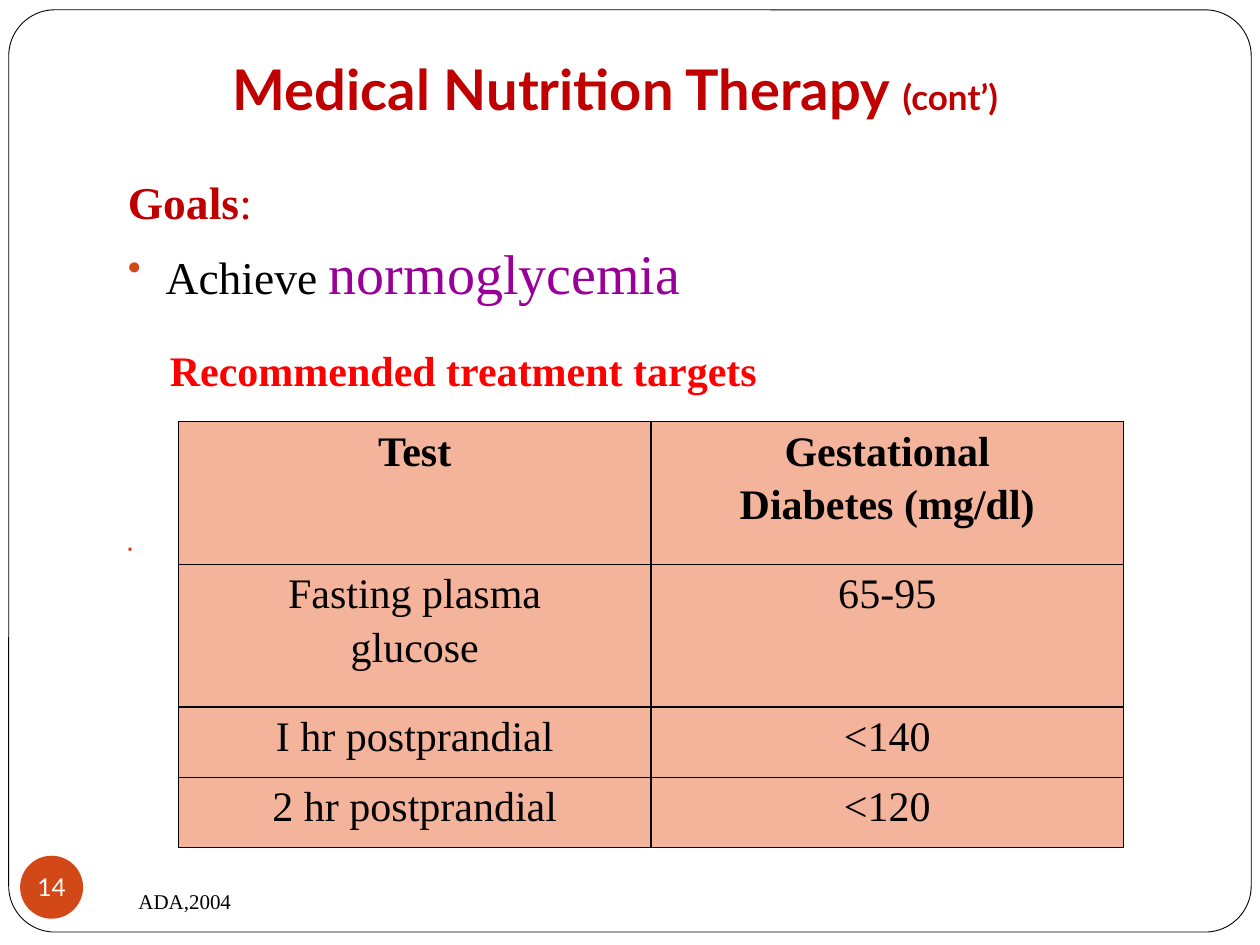
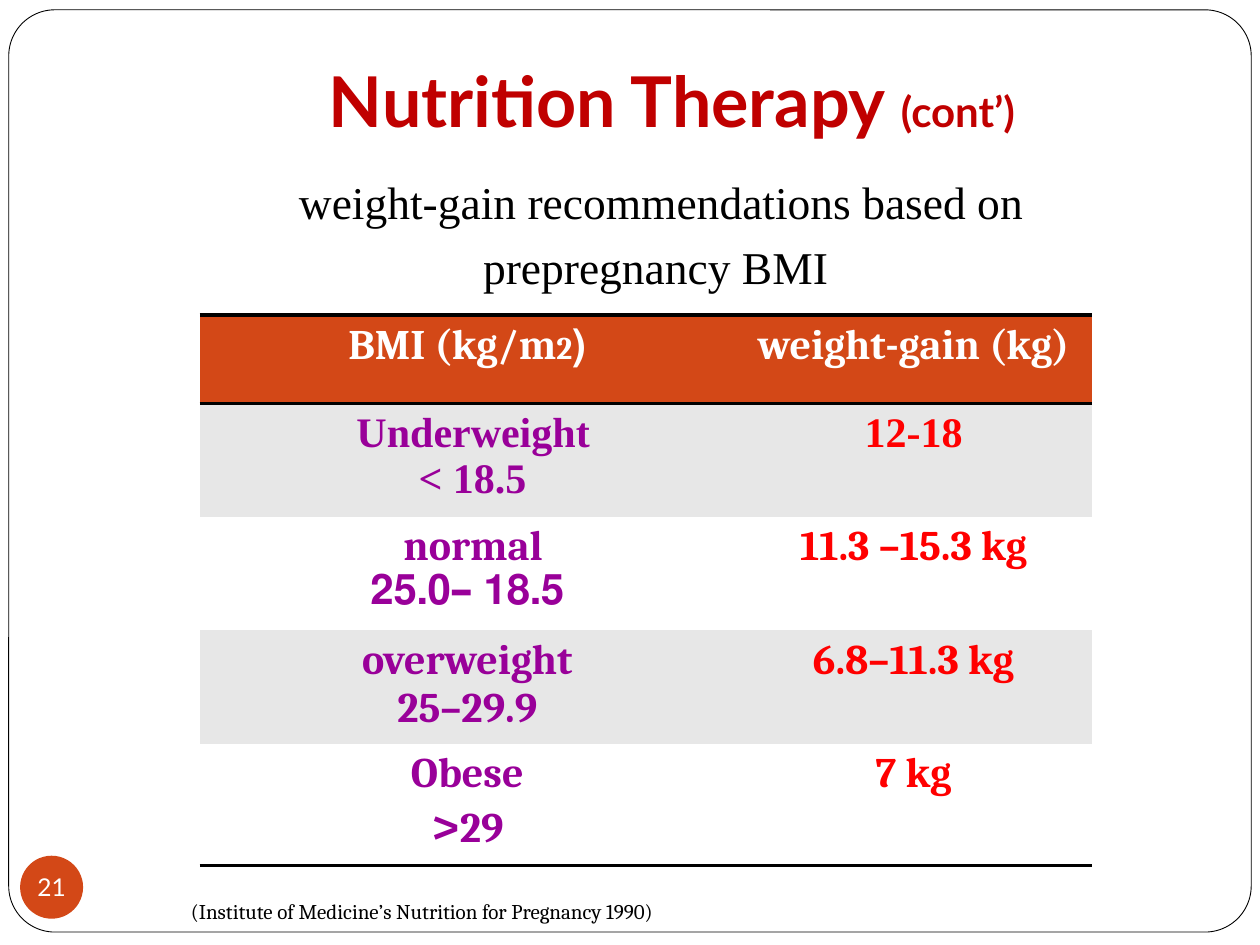
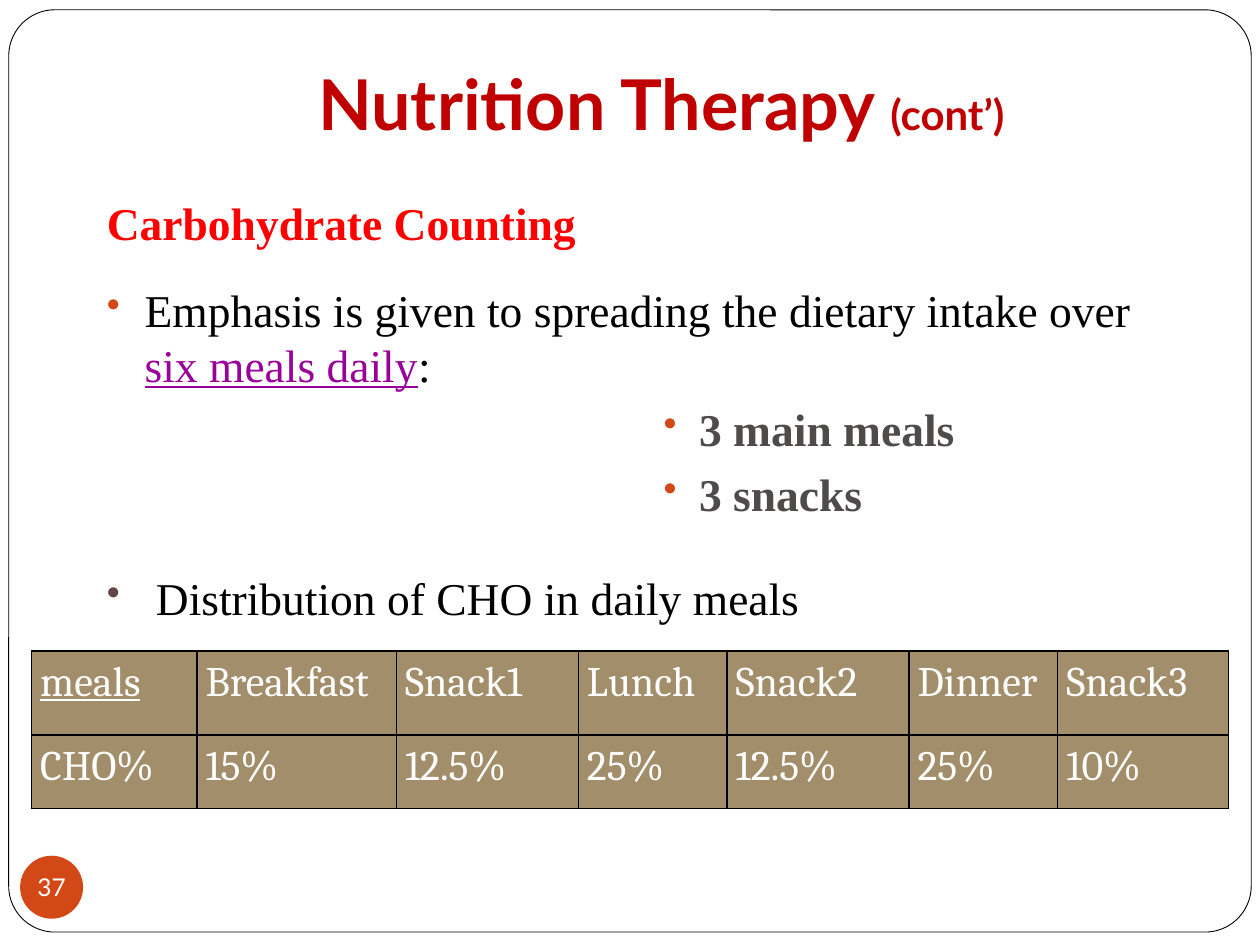
from dataclasses import dataclass
from typing import NamedTuple

from lxml import etree
from pptx import Presentation
from pptx.dml.color import RGBColor
from pptx.enum.shapes import MSO_SHAPE
from pptx.enum.text import MSO_ANCHOR, PP_ALIGN
from pptx.oxml.ns import qn
from pptx.util import Pt

LEFT, CENTER = PP_ALIGN.LEFT, PP_ALIGN.CENTER
TOP, MIDDLE, BOTTOM = MSO_ANCHOR.TOP, MSO_ANCHOR.MIDDLE, MSO_ANCHOR.BOTTOM
ROUNDED, OVAL = MSO_SHAPE.ROUNDED_RECTANGLE, MSO_SHAPE.OVAL

COLORS = {
    "white": "FFFFFF", "black": "000000", "title": "C00000", "accent": "D34817",
    "red": "FF0000", "purple": "990099", "gray": "4F4B4B", "brown": "644646",
    "peach": "F4B39B", "band": "E7E7E7", "tan": "A28E6A",
}
TITLE_FONT, BODY_FONT, TABLE_FONT = "Lato", "Times New Roman", "Cambria"
NO_STYLE = "{2D5ABB26-0587-4C30-8999-92F81FD0307C}"
EDGES = {"l": "a:lnL", "r": "a:lnR", "t": "a:lnT", "b": "a:lnB"}


class Area(NamedTuple):
    left: float
    top: float
    width: float
    height: float


class Insets(NamedTuple):
    left: float = 7.2
    top: float = 3.6
    right: float = 7.2
    bottom: float = 3.6


@dataclass
class Span:
    text: str
    color: str = "black"
    size: float = 26
    font: str = BODY_FONT
    bold: bool = False
    underline: bool = False


@dataclass
class Para:
    spans: list[Span]
    align: PP_ALIGN = LEFT
    before: float = 0
    margin: float = 0
    bullet: str = ""
    spacing: float = 1.0
    rtl: bool = False


@dataclass
class Cell:
    paras: list[Para]
    fill: str
    edges: str = ""


@dataclass
class Grid:
    area: Area
    columns: list[float]
    rows: list[float]
    cells: list[list[Cell]]
    insets: Insets = Insets()
    border: float = 1


TITLE_INSETS = Insets(bottom=7.2)
TIGHT_INSETS = Insets(5, 0, 5, 0)


def rgb(name: str) -> RGBColor:
    return RGBColor.from_string(COLORS[name])


def add_color(parent, name: str) -> None:
    fill = etree.SubElement(parent, qn("a:solidFill"))
    etree.SubElement(fill, qn("a:srgbClr"), val=COLORS[name])


# Text
def add_bullet(props, color: str) -> None:
    tint = etree.SubElement(props, qn("a:buClr"))
    etree.SubElement(tint, qn("a:srgbClr"), val=COLORS[color])
    etree.SubElement(props, qn("a:buSzPct"), val="85000")
    etree.SubElement(props, qn("a:buChar"), char="•")


def write_paras(frame, paras: list[Para]) -> None:
    for index, item in enumerate(paras):
        para = frame.paragraphs[0] if index == 0 else frame.add_paragraph()
        para.alignment = item.align
        para.line_spacing = item.spacing
        para.space_before = Pt(item.before)
        props = para._p.get_or_add_pPr()
        if item.margin:
            props.set("marL", str(Pt(item.margin)))
        if item.rtl:
            props.set("rtl", "1")
        if item.bullet:
            hang = min(item.margin, 20.2) if item.margin > 30 else item.margin
            props.set("indent", str(-Pt(hang)))
            add_bullet(props, item.bullet)
        for span in item.spans:
            run = para.add_run()
            run.text = span.text
            run.font.name = span.font
            run.font.size = Pt(span.size)
            run.font.bold = span.bold
            run.font.underline = span.underline
            run.font.color.rgb = rgb(span.color)


def set_insets(target, insets: Insets) -> None:
    target.margin_left, target.margin_top = Pt(insets.left), Pt(insets.top)
    target.margin_right, target.margin_bottom = Pt(insets.right), Pt(insets.bottom)


def add_text(page, area: Area, paras: list[Para], anchor: MSO_ANCHOR = TOP,
             insets: Insets = Insets()) -> None:
    box = page.shapes.add_textbox(*map(Pt, area))
    frame = box.text_frame
    frame.word_wrap = True
    frame.vertical_anchor = anchor
    set_insets(frame, insets)
    write_paras(frame, paras)


# Shared parts
def add_plain_shape(page, kind: MSO_SHAPE, area: Area, fill: str):
    shape = page.shapes.add_shape(kind, *map(Pt, area))
    shape.shadow.inherit = False
    shape.fill.solid()
    shape.fill.fore_color.rgb = rgb(fill)
    return shape


def add_page(deck, number: str):
    page = deck.slides.add_slide(deck.slide_layouts[6])
    border = add_plain_shape(page, ROUNDED, Area(5, 5.6, 710, 527), "white")
    border.adjustments[0] = 0.05
    border.line.color.rgb = rgb("black")
    border.line.width = Pt(0.5)

    badge = add_plain_shape(page, OVAL, Area(11.5, 489, 36, 36), "accent")
    badge.line.fill.background()
    frame = badge.text_frame
    frame.word_wrap = False
    frame.vertical_anchor = MIDDLE
    set_insets(frame, Insets(0, 0, 0, 0))
    write_paras(frame, [Para([Span(number, "white", 14, TITLE_FONT)], CENTER)])
    return page


def add_title(page, area: Area, text: str, size: float, small: float,
              align: PP_ALIGN = CENTER, insets: Insets = TITLE_INSETS) -> None:
    spans = [Span(text + " ", "title", size, TITLE_FONT, True),
             Span("(cont’)", "title", small, TITLE_FONT, True)]
    add_text(page, area, [Para(spans, align)], BOTTOM, insets)


def add_source(page, area: Area, text: str, font: str) -> None:
    add_text(page, area, [Para([Span(text, size=12, font=font)])])


# Tables
def add_edges(cell, edges: str, width: float) -> None:
    props = cell._tc.get_or_add_tcPr()
    chosen = [tag for key, tag in EDGES.items() if key in edges]
    for place, tag in enumerate(chosen):
        line = etree.Element(qn(tag), w=str(Pt(width)))
        add_color(line, "black")
        props.insert(place, line)


def add_grid(page, grid: Grid) -> None:
    frame = page.shapes.add_table(len(grid.rows), len(grid.columns), *map(Pt, grid.area))
    table = frame.table
    table.first_row = table.horz_banding = False
    for style in frame.element.iter(qn("a:tableStyleId")):
        style.text = NO_STYLE
    for column, width in zip(table.columns, grid.columns):
        column.width = Pt(width)
    for row, height, items in zip(table.rows, grid.rows, grid.cells):
        row.height = Pt(height)
        for cell, item in zip(row.cells, items):
            set_insets(cell, grid.insets)
            cell.fill.solid()
            cell.fill.fore_color.rgb = rgb(item.fill)
            add_edges(cell, item.edges, grid.border)
            write_paras(cell.text_frame, item.paras)


# Slide 14: treatment targets
def build_targets(deck) -> None:
    page = add_page(deck, "14")
    add_title(page, Area(126, 18, 480, 59), "Medical Nutrition Therapy", 32, 20, LEFT)
    add_text(page, Area(66, 96, 624, 408), [
        Para([Span("Goals", "title", bold=True), Span(":", "title")], before=5.8),
        Para([Span("Achieve "), Span("normoglycemia", "purple", 32)],
             before=5.8, margin=21.6, bullet="accent"),
        Para([Span("Recommended treatment targets", "red", 24, bold=True)],
             before=22, margin=24),
        Para([Span(" ", size=9)], before=84, margin=21.6, bullet="accent"),
    ])
    add_source(page, Area(72, 504, 90, 22), "ADA,2004", BODY_FONT)

    targets = [
        (["Test"], ["Gestational", "Diabetes (mg/dl)"]),
        (["Fasting plasma", "glucose"], ["65-95"]),
        (["I hr postprandial"], ["<140"]),
        (["2 hr postprandial"], ["<120"]),
    ]
    cells = [[Cell([Para([Span(line, size=24, bold=index == 0)], CENTER, spacing=1.15)
                    for line in lines], "peach", "lrtb") for lines in row]
             for index, row in enumerate(targets)]
    add_grid(page, Grid(Area(102, 241, 540, 243.4), [270, 270],
                        [81.5, 81.5, 40.2, 40.2], cells, TIGHT_INSETS))


# Slide 21: weight gain by BMI
def build_weight_gain(deck) -> None:
    page = add_page(deck, "21")
    lines = ["weight-gain recommendations based on", "prepregnancy BMI "]
    add_text(page, Area(72, 96, 612, 408),
             [Para([Span(line)], CENTER, before=5.8) for line in lines])

    def strong(text: str, color: str, size: float = 24, font: str = TABLE_FONT) -> Span:
        return Span(text, color, size, font, True)

    def purple(text: str, rtl: bool = False, font: str = TABLE_FONT) -> Para:
        return Para([strong(text, "purple", font=font)], CENTER, rtl=rtl)

    heading = Para([strong("(BMI (kg/m", "white"), strong("2", "white", 18)],
                   CENTER, rtl=True)
    gain_heading = Para([strong("weight-gain (kg)", "white")], CENTER)
    cells = [[Cell([heading], "accent", "tb"), Cell([gain_heading], "accent", "tb")]]
    classes = [
        ([purple("Underweight ", True, BODY_FONT), purple(" ˂ 18.5", font=BODY_FONT)],
         "12-18", BODY_FONT),
        ([purple("normal ", True), purple("18.5 –25.0", True)], "11.3 –15.3 kg", TABLE_FONT),
        ([purple("overweight"), purple("25–29.9")], "6.8–11.3 kg", TABLE_FONT),
        ([purple("Obese"),
          Para([strong(">", "purple", 28), strong("29", "purple")], CENTER)],
         "7 kg", TABLE_FONT),
    ]
    for index, (group, gain, font) in enumerate(classes):
        fill = "white" if index % 2 else "band"
        edges = "b" if index == len(classes) - 1 else ""
        gain_para = Para([strong(gain, "red", font=font)], CENTER)
        cells.append([Cell(group, fill, edges), Cell([gain_para], fill, edges)])
    add_grid(page, Grid(Area(114, 180, 510, 299), [306, 204],
                        [50.5, 60, 59, 63, 66.5], cells, border=2))

    add_title(page, Area(102, 11.5, 564, 72.7), "Nutrition Therapy", 40, 24,
              insets=Insets())
    add_source(page, Area(102, 510, 402, 22),
               "(Institute of Medicine’s Nutrition for Pregnancy 1990)", TABLE_FONT)


# Slide 37: carbohydrate counting
def build_carbohydrates(deck) -> None:
    page = add_page(deck, "37")
    add_title(page, Area(72, 6, 612, 84), "Nutrition Therapy", 40, 24)
    meals = [Para([Span(text, "gray", bold=True)], before=5.8, margin=338.4,
                  bullet="accent") for text in ("3 main meals", "3 snacks")]
    add_text(page, Area(54, 108, 624, 258), [
        Para([Span("Carbohydrate Counting", "red", bold=True)], before=5.8),
        Para([Span("Emphasis is given to spreading the dietary intake over "),
              Span("six meals daily", "purple", underline=True), Span(":")],
             before=18.5, margin=21.6, bullet="accent"),
        *meals,
        Para([Span("Distribution of CHO in daily meals")],
             before=28, margin=28, bullet="brown"),
    ])

    shares = [
        ["meals", "Breakfast", "Snack1", "Lunch", "Snack2", "Dinner", "Snack3"],
        ["CHO%", "15%", "12.5%", "25%", "12.5%", "25%", "10%"],
    ]
    cells = [[Cell([Para([Span(text, "white", 24, TABLE_FONT, underline=text == "meals")],
                         spacing=1.15)], "tan", "lrtb") for text in row]
             for row in shares]
    add_grid(page, Grid(Area(18, 372, 684, 90), [94.5, 114, 104, 85, 104, 85, 97.5],
                        [48, 42], cells, TIGHT_INSETS))


def main() -> None:
    deck = Presentation()
    deck.slide_width, deck.slide_height = Pt(720), Pt(540)
    build_targets(deck)
    build_weight_gain(deck)
    build_carbohydrates(deck)
    deck.save("out.pptx")


if __name__ == "__main__":
    main()
